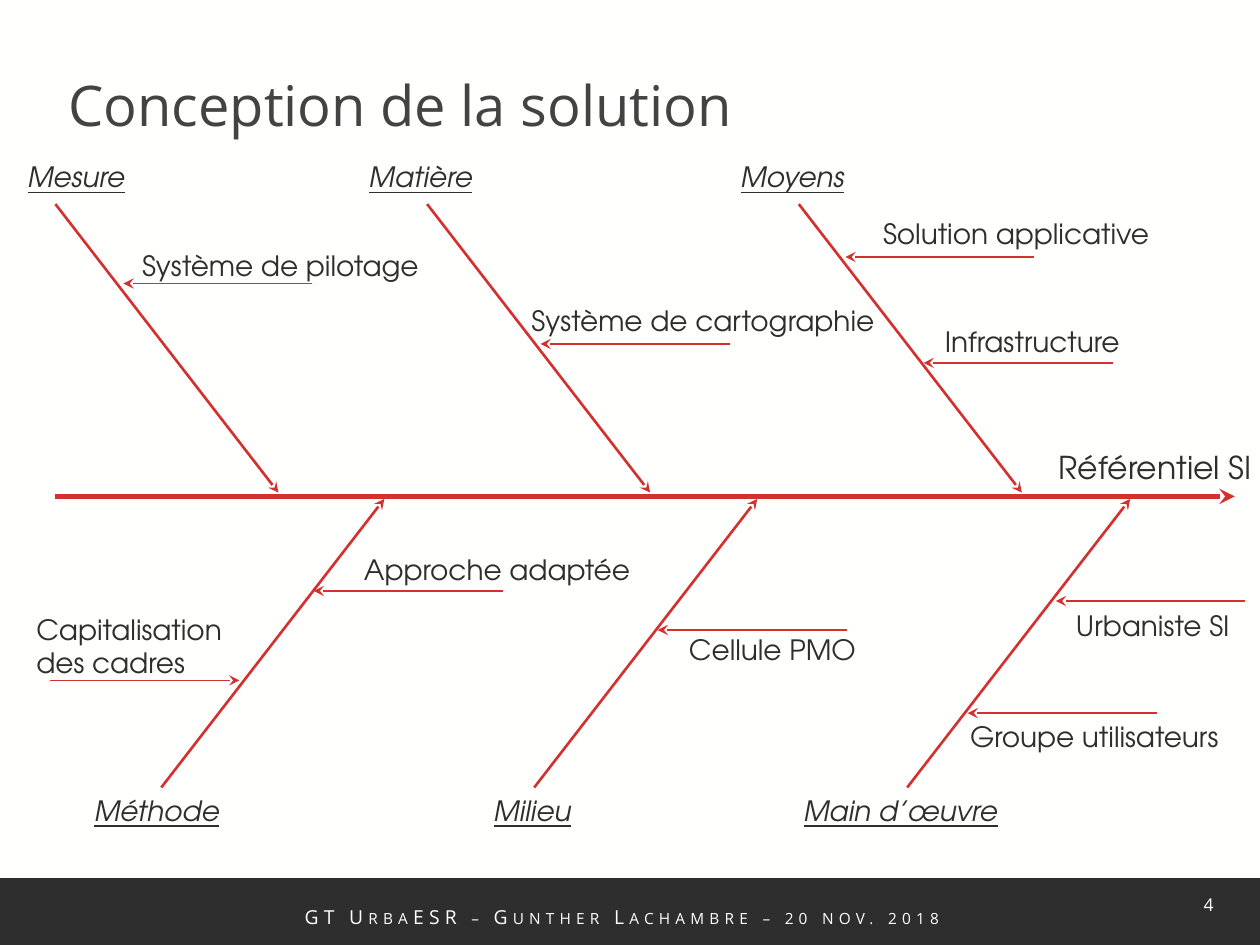
import pptx
import pptx.dml.color
import pptx.enum.shapes
import pptx.enum.text
import pptx.oxml.ns
import pptx.util
import lxml.etree

Inches = pptx.util.Inches
ALIGN = pptx.enum.text.PP_ALIGN
ANCHOR = pptx.enum.text.MSO_ANCHOR
RED, DARK, TITLE_GREY, WHITE = "D33030", "2D2E2D", "424342", "FFFFFE"
LABEL_FONT, BODY_FONT = "TeX Gyre Adventor", "Open Sans"
BONE_WIDTH, BONE_HEIGHT = 1.77, 2.29
CAUSE_LENGTH = 1.5

UPPER_BONES = [("Mesure", -0.32, 0.99), ("Matière", -0.56, 1.04), ("Moyens", -0.56, 1.05)]
LOWER_BONES = [("Méthode", -0.63, 1.21), ("Milieu", -0.42, 0.83), ("Main d’œuvre", -0.92, 1.77)]

CAUSES = [
    ("Système de pilotage", 0.98, 2.25, 0.05, -0.33, 2.44),
    ("Système de cartographie", 4.29, 2.73, -0.17, -0.37, 2.96),
    ("Solution applicative", 6.71, 2.04, 0.2, -0.37, 2.35),
    ("Infrastructure", 7.33, 2.88, 0.07, -0.35, 1.62),
    ("Approche adaptée", 2.49, 4.69, 0.3, -0.35, 2.36),
    ("Cellule PMO", 5.22, 5, 0.15, -0.03, 1.54),
    ("Urbaniste SI", 8.38, 4.77, 0.06, 0.01, 1.44),
    ("Groupe utilisateurs", 7.68, 5.66, -0.08, 0, 2.21),
]


def color(value):
    return pptx.dml.color.RGBColor.from_string(value)


def style_text(frame, size, font_name, value, align=ALIGN.LEFT):
    for para in frame.paragraphs:
        para.alignment = align
        for span in para.runs:
            span.font.size = pptx.util.Pt(size)
            span.font.name = font_name
            span.font.color.rgb = color(value)


def add_text(page, text, left, top, width, height, size=16, font_name=LABEL_FONT,
             value=DARK, align=ALIGN.LEFT, anchor=ANCHOR.TOP):
    box = page.shapes.add_textbox(Inches(left), Inches(top), Inches(width), Inches(height))
    frame = box.text_frame
    frame.text = text
    frame.word_wrap = False
    frame.vertical_anchor = anchor
    style_text(frame, size, font_name, value, align)
    return box


def add_arrow(page, start_x, start_y, end_x, end_y, weight):
    arrow = page.shapes.add_connector(
        pptx.enum.shapes.MSO_CONNECTOR.STRAIGHT,
        Inches(start_x), Inches(start_y), Inches(end_x), Inches(end_y))
    arrow.line.color.rgb = color(RED)
    arrow.line.width = pptx.util.Pt(weight)
    properties = arrow._element.spPr
    outline = properties.find(pptx.oxml.ns.qn("a:ln"))
    lxml.etree.SubElement(outline, pptx.oxml.ns.qn("a:tailEnd"), type="stealth")
    lxml.etree.SubElement(properties, pptx.oxml.ns.qn("a:effectLst"))


def draw_title(page, left, top, width, height):
    title = page.shapes.title
    title.left, title.top = Inches(left), Inches(top)
    title.width, title.height = Inches(width), Inches(height)
    frame = title.text_frame
    frame.text = "Conception de la solution"
    frame.vertical_anchor = ANCHOR.TOP
    frame.paragraphs[0].line_spacing = 0.95
    style_text(frame, 32, BODY_FONT, TITLE_GREY)


def draw_footer(page, left, top, width, height):
    band = page.shapes.add_shape(
        pptx.enum.shapes.MSO_SHAPE.RECTANGLE,
        Inches(left), Inches(top), Inches(width), Inches(height))
    band.shadow.inherit = False
    band.fill.solid()
    band.fill.fore_color.rgb = color(DARK)
    band.line.fill.background()
    credit = add_text(page, "GT UrbaESR – Gunther Lachambre – 20 nov. 2018",
                      left + 2.32, top + 0.09, 5.36, 0.44, 11, BODY_FONT, WHITE,
                      ALIGN.CENTER, ANCHOR.MIDDLE)
    span_properties = credit.text_frame.paragraphs[0].runs[0]._r.get_or_add_rPr()
    span_properties.set("cap", "small")
    span_properties.set("spc", "300")
    number = add_text(page, "4", left + 8.39, top + 0.08, 1.34, 0.4, 10, BODY_FONT, WHITE,
                      ALIGN.RIGHT)
    number.text_frame.word_wrap = True


def draw_bone(page, left, top, rising, text, label_offset, label_width):
    bottom, right = top + BONE_HEIGHT, left + BONE_WIDTH
    start_y, end_y = (bottom, top) if rising else (top, bottom)
    label_top = bottom if rising else top - 0.4
    add_arrow(page, left, start_y, right, end_y, 1.5)
    label = add_text(page, text, left + label_offset, label_top, label_width, 0.37)
    font = label.text_frame.paragraphs[0].runs[0].font
    font.italic = True
    font.underline = True


def draw_cause(page, text, tip_x, tip_y, offset_x, offset_y, width, height=0.37, side=1):
    add_arrow(page, tip_x + side * CAUSE_LENGTH, tip_y, tip_x, tip_y, 0.75)
    add_text(page, text, tip_x + offset_x, tip_y + offset_y, width, height)


def draw_fishbone(page, left, spine_y, width):
    for index, bone in enumerate(UPPER_BONES):
        draw_bone(page, left + 2.95 * index, spine_y - 2.32, False, *bone)
    for index, bone in enumerate(LOWER_BONES):
        draw_bone(page, left + 0.84 + 2.96 * index, spine_y + 0.02, True, *bone)
    add_arrow(page, left, spine_y, left + width, spine_y, 3)
    add_text(page, "Référentiel SI", left + width - 1.51, spine_y - 0.43, 1.76, 0.4, 18,
             align=ALIGN.CENTER)
    for cause in CAUSES:
        draw_cause(page, *cause)
    draw_cause(page, "Capitalisation\ndes cadres", 1.9, 5.4, -1.71, -0.59, 1.76, 0.64, -1)


def main():
    deck = pptx.Presentation()
    deck.slide_width, deck.slide_height = Inches(10), Inches(7.5)
    page = deck.slides.add_slide(deck.slide_layouts[5])
    page.background.fill.solid()
    page.background.fill.fore_color.rgb = color(WHITE)
    draw_footer(page, 0, 6.97, 10, 0.53)
    draw_title(page, 0.44, 0.55, 9.36, 0.86)
    draw_fishbone(page, 0.44, 3.94, 9.36)
    deck.save("out.pptx")


if __name__ == "__main__":
    main()
